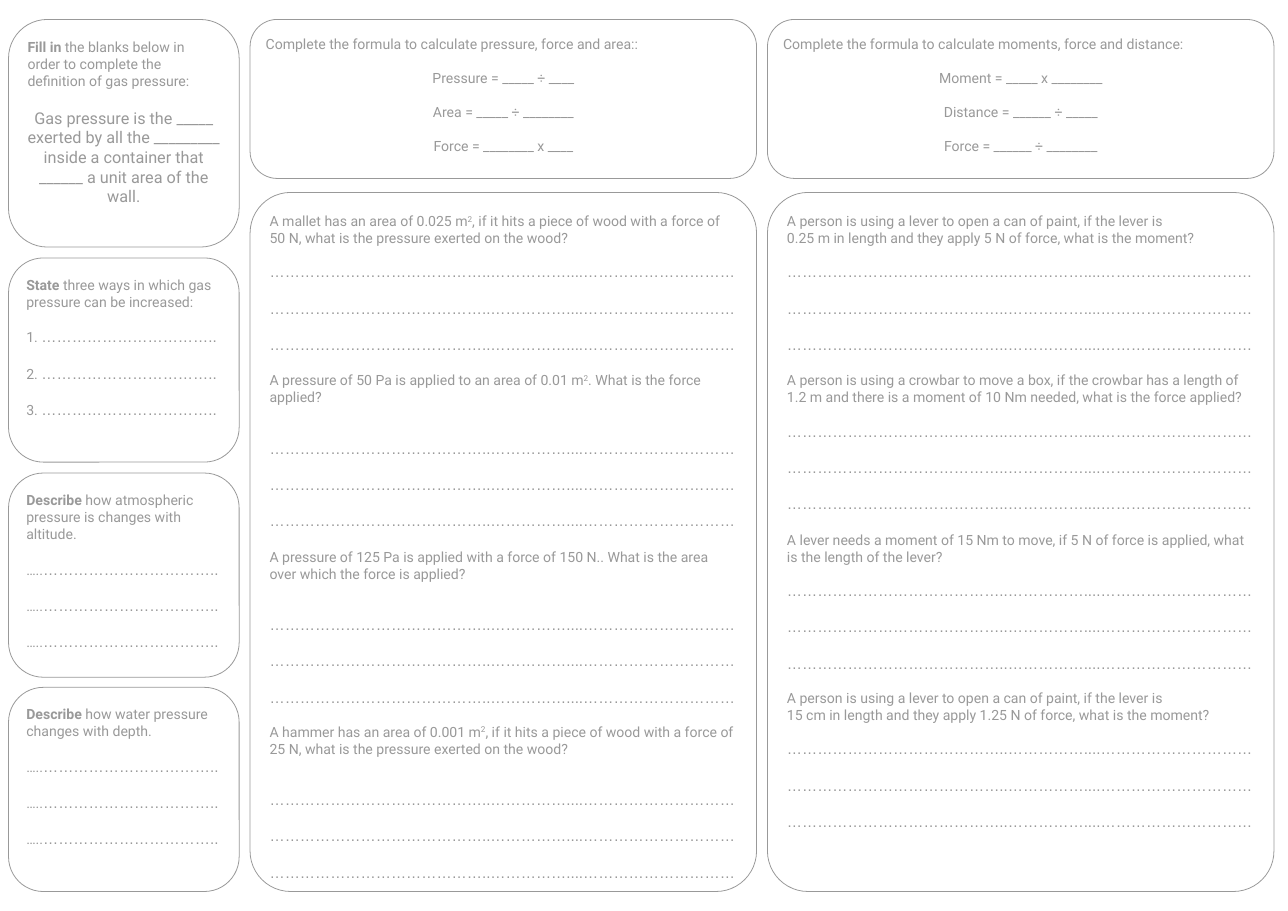
"""Build a gas pressure and moments worksheet slide."""
from pptx import Presentation
from pptx.dml.color import RGBColor
from pptx.enum.shapes import MSO_SHAPE
from pptx.enum.text import MSO_ANCHOR, PP_ALIGN
from pptx.util import Pt

ROUND = MSO_SHAPE.ROUNDED_RECTANGLE
TOP, LEFT, MID = MSO_ANCHOR.TOP, PP_ALIGN.LEFT, PP_ALIGN.CENTER
PX = 9144
SLIDE = (1653, 1169)
COLORS = {"gray": "999999"}

LONG = "……………………………………..……………....…………………………"
SHORT = "…………………………….."

PLAIN = ("Roboto", 13, False, False)
BOLD = ("Roboto", 13, True, False)
SUPER = ("Roboto", 13, False, True)
BIG = ("Roboto", 15, False, False)
DOTS = ("Arial", 14, False, False)
PITCH = {13: 15.7, 14: 16.5, 15: 18.1}
GAP, REST = 15.7, 16.9

TASKS = [
    ("Fill in", " the blanks below in order to complete the definition of gas pressure:", []),
    ("State", " three ways in which gas pressure can be increased:", ["1. ", "2. ", "3. "]),
    ("Describe", " how atmospheric pressure is changes with altitude.", ["….."] * 3),
    ("Describe", " how water pressure changes with depth.", ["….."] * 3),
]
BLANKS = ("Gas pressure is the _____ exerted by all the _________ inside a "
          "container that ______ a unit area of the wall.")
RULES = [
    ("Complete the formula to calculate pressure, force and area::",
     ["Pressure = _____ ÷ ____", "Area = _____ ÷ ________", "Force = ________ x ____"]),
    ("Complete the formula to calculate moments, force and distance:",
     ["Moment = _____ x ________", "Distance = ______ ÷ _____", "Force = ______ ÷ ________"]),
]
PRESS = [
    [("A mallet has an area of 0.025 m", "2", ", if it hits a piece of wood with a "
      "force of 50 N, what is the pressure exerted on the wood?")],
    [("A pressure of 50 Pa is applied to an area of 0.01 m", "2",
      ". What is the force applied?")],
    [("A pressure of 125 Pa is applied with a force of 150 N.. What is the area "
      "over which the force is applied?",)],
    [("A hammer has an area of 0.001 m", "2", ", if it hits a piece of wood with a "
      "force of 25 N, what is the pressure exerted on the wood?")],
]
LEVER = "A person is using a lever to open a can of paint, if the lever is"
MOMENT = [
    [(LEVER,), ("0.25 m in length and they apply 5 N of force, what is the moment?",)],
    [("A person is using a crowbar to move a box, if the crowbar has a length of "
      "1.2 m and there is a moment of 10 Nm needed, what is the force applied?",)],
    [("A lever needs a moment of 15 Nm to move, if 5 N of force is applied, what "
      "is the length of the lever?",)],
    [(LEVER,), ("15 cm in length and they apply 1.25 N of force, what is the moment?",)],
]
QUIZ = [(PRESS, [1, 2, 2, 2]), (MOMENT, [1, 1, 1, 1])]

SIDE = (11, 296)
CARDS = [(25, 292), (331, 262), (607, 262), (882, 262)]
COLS, WIDE = (321, 985), 650
HEAD, BODY = (25, 204), (247, 897)


def task_rows(word, rest, marks):
    rows = [(0, LEFT, [(word, BOLD), (rest, PLAIN)])]
    rows += [(REST, LEFT, [(mark, PLAIN), (SHORT, DOTS)]) for mark in marks]
    return rows if marks else rows + [(REST, MID, [(BLANKS, BIG)])]


def rule_rows(head, lines):
    return [(0, LEFT, [(head, PLAIN)])] + [(GAP, MID, [(line, PLAIN)]) for line in lines]


def quiz_rows(asks, gaps):
    rows = []
    for i, (ask, gap) in enumerate(zip(asks, gaps)):
        above = 0 if i == 0 else GAP if i == len(asks) - 1 else REST
        for j, parts in enumerate(ask):
            runs = [(part, SUPER if k == 1 else PLAIN) for k, part in enumerate(parts)]
            rows.append((0 if j else above, LEFT, runs))
        rows += [(space, LEFT, [(LONG, DOTS)]) for space in (gap * GAP, REST, REST)]
    return rows


def add_run(para, text, style):
    run = para.add_run()
    run.text = text
    font = run.font
    font.name, size, font.bold, raised = style
    font.size = Pt(size)
    font.color.rgb = RGBColor.from_string(COLORS["gray"])
    if raised:
        run._r.get_or_add_rPr().set("baseline", "30000")


def add_card(slide, box, curve, rows):
    card = slide.shapes.add_shape(ROUND, *(n * PX for n in box))
    card.adjustments[0] = curve
    card.shadow.inherit = False
    card.fill.background()
    card.line.color.rgb = RGBColor.from_string(COLORS["gray"])
    card.line.width = Pt(0.75)
    frame = card.text_frame
    frame.word_wrap = True
    frame.vertical_anchor = TOP
    frame.margin_left = frame.margin_right = 10 * PX
    frame.margin_top = frame.margin_bottom = 10 * PX
    for i, (gap, align, runs) in enumerate(rows):
        para = frame.add_paragraph() if i else frame.paragraphs[0]
        para.alignment = align
        para.space_before = Pt(gap)
        para.line_spacing = Pt(max(PITCH[style[1]] for _, style in runs))
        for text, style in runs:
            add_run(para, text, style)


def main():
    deck = Presentation()
    deck.slide_width, deck.slide_height = (n * PX for n in SLIDE)
    slide = deck.slides.add_slide(deck.slide_layouts[6])
    for (top, high), task in zip(CARDS, TASKS):
        add_card(slide, (SIDE[0], top, SIDE[1], high), 0.17, task_rows(*task))
    for left, rule, quiz in zip(COLS, RULES, QUIZ):
        add_card(slide, (left, HEAD[0], WIDE, HEAD[1]), 0.17, rule_rows(*rule))
        add_card(slide, (left, BODY[0], WIDE, BODY[1]), 0.08, quiz_rows(*quiz))
    deck.save("out.pptx")


if __name__ == "__main__":
    main()
